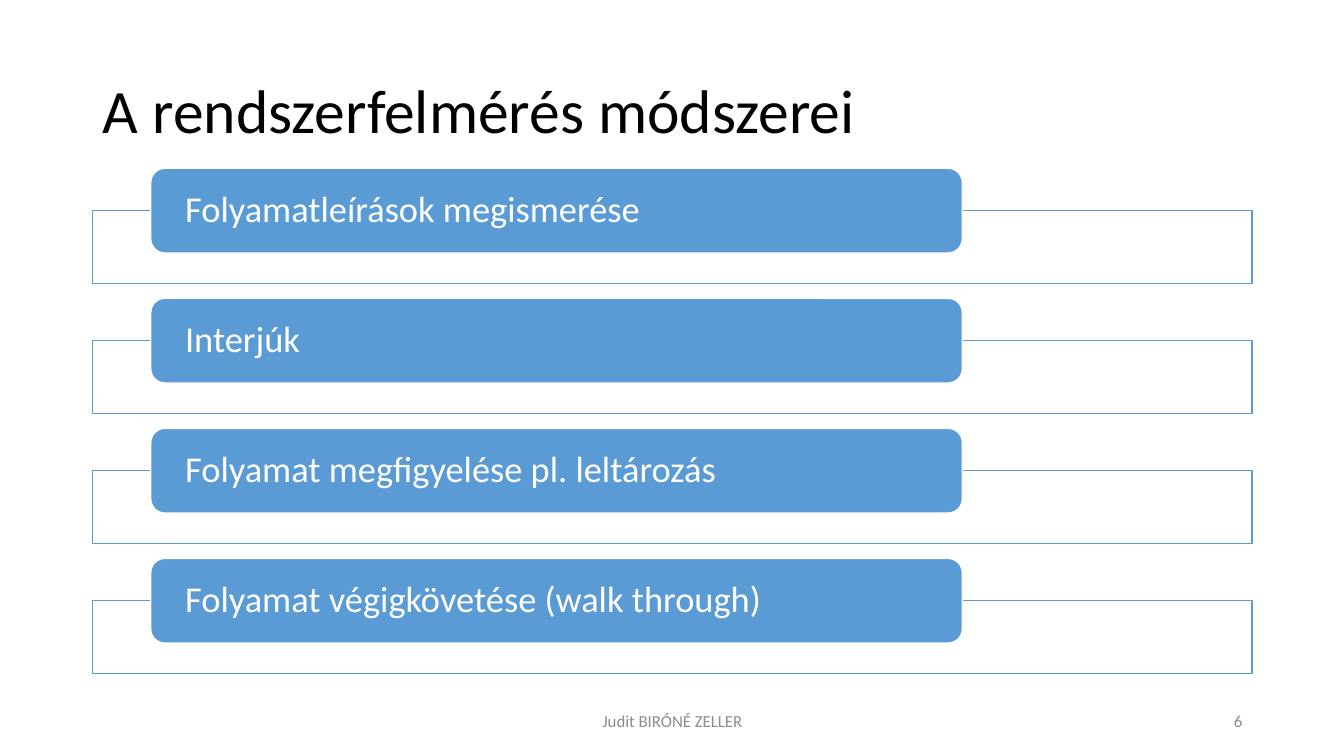
import pptx
import pptx.dml.color
import pptx.enum.shapes
import pptx.enum.text
import pptx.oxml.ns
import pptx.util
from lxml import etree

Inches = pptx.util.Inches
Pt = pptx.util.Pt
Align = pptx.enum.text.PP_ALIGN
Shape = pptx.enum.shapes.MSO_SHAPE

FONT = "Calibri"
BLUE, WHITE, BLACK, GREY = "5B9BD5", "FFFFFF", "000000", "8C8C8C"
METHODS = [
    "Folyamatleírások megismerése",
    "Interjúk",
    "Folyamat megfigyelése pl. leltározás",
    "Folyamat végigkövetése (walk through)",
]
LEFT, WIDTH = 0.92, 11.5
METHODS_TOP, METHOD_PITCH = 1.67, 1.29
LABEL_HEIGHT, FRAME_HEIGHT = 0.84, 0.72


def color(hex_string):
    return pptx.dml.color.RGBColor.from_string(hex_string)


def write(shape, text, size, hex_string, align=Align.LEFT, line_spacing=1.0):
    frame = shape.text_frame
    frame.word_wrap = True
    frame.vertical_anchor = pptx.enum.text.MSO_ANCHOR.MIDDLE
    paragraph = frame.paragraphs[0]
    paragraph.text = text
    paragraph.alignment = align
    paragraph.line_spacing = line_spacing
    paragraph.font.name = FONT
    paragraph.font.size = Pt(size)
    paragraph.font.color.rgb = color(hex_string)


def add_box(slide, kind, left, top, width, height, fill, line):
    box = slide.shapes.add_shape(
        kind, Inches(left), Inches(top), Inches(width), Inches(height))
    box.shadow.inherit = False
    box.fill.solid()
    box.fill.fore_color.rgb = color(fill)
    box.line.color.rgb = color(line)
    box.line.width = Pt(1)
    return box


def set_opacity(box, percent):
    fill_color = box.fill._xPr.find(
        "./" + pptx.oxml.ns.qn("a:solidFill") + "/" + pptx.oxml.ns.qn("a:srgbClr"))
    alpha = etree.SubElement(fill_color, pptx.oxml.ns.qn("a:alpha"))
    alpha.set("val", str(percent * 1000))


def add_title(slide, text, left, top, width, height):
    title = slide.shapes.title
    title.left, title.top = Inches(left), Inches(top)
    title.width, title.height = Inches(width), Inches(height)
    write(title, text, 44, BLACK, line_spacing=0.9)


def add_method(slide, text, left, top, width):
    """Draw an empty frame with a rounded label across its top edge."""
    frame = add_box(slide, Shape.RECTANGLE, left, top + LABEL_HEIGHT / 2,
                    width, FRAME_HEIGHT, WHITE, BLUE)
    set_opacity(frame, 90)
    label = add_box(slide, Shape.ROUNDED_RECTANGLE, left + width * 0.05, top,
                    width * 0.7, LABEL_HEIGHT, BLUE, WHITE)
    write(label, text, 26, WHITE, line_spacing=0.9)
    label.text_frame.margin_left = label.text_frame.margin_right = Inches(0.3)
    label.text_frame.margin_top = label.text_frame.margin_bottom = 0


def add_footer_text(slide, text, left, width, align):
    box = slide.shapes.add_textbox(
        Inches(left), Inches(6.95), Inches(width), Inches(0.4))
    write(box, text, 12, GREY, align)


def main():
    deck = pptx.Presentation()
    deck.slide_width, deck.slide_height = Inches(13.33), Inches(7.5)
    slide = deck.slides.add_slide(deck.slide_layouts.get_by_name("Title Only"))
    add_title(slide, "A rendszerfelmérés módszerei", LEFT, 0.4, WIDTH, 1.45)
    for index, method in enumerate(METHODS):
        add_method(slide, method, LEFT, METHODS_TOP + index * METHOD_PITCH, WIDTH)
    add_footer_text(slide, "Judit BIRÓNÉ ZELLER", 4.42, 4.5, Align.CENTER)
    add_footer_text(slide, "6", 9.42, 3, Align.RIGHT)
    deck.save("out.pptx")


if __name__ == "__main__":
    main()
